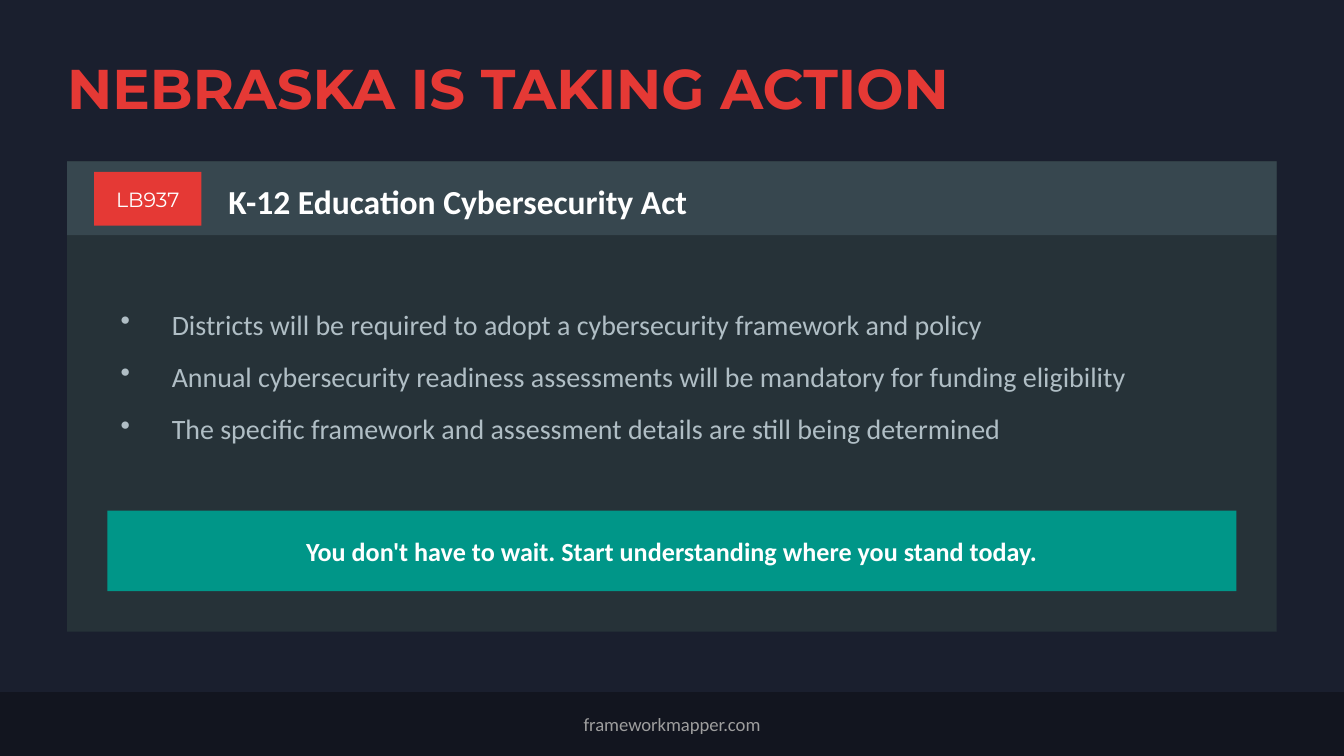
from lxml import etree
from pptx import Presentation
from pptx.dml.color import RGBColor
from pptx.enum import shapes, text
from pptx.oxml import ns
from pptx.util import Emu, Pt

PX = 4572
SLIDE_WIDTH, SLIDE_HEIGHT = 2000, 1125

NAVY = RGBColor(0x1A, 0x1F, 0x2E)
DARK_NAVY = RGBColor(0x12, 0x15, 0x1F)
CHARCOAL = RGBColor(0x26, 0x32, 0x38)
SLATE = RGBColor(0x37, 0x47, 0x4F)
RED = RGBColor(0xE5, 0x39, 0x35)
TEAL = RGBColor(0x00, 0x96, 0x88)
WHITE = RGBColor(0xFF, 0xFF, 0xFF)
MIST = RGBColor(0xB0, 0xBE, 0xC5)
GREY = RGBColor(0x9E, 0x9E, 0x9E)

HEADING_FONT, BODY_FONT = "Montserrat", "Calibri"
LEFT, CENTER = text.PP_ALIGN.LEFT, text.PP_ALIGN.CENTER

REQUIREMENTS = (
    "Districts will be required to adopt a cybersecurity framework and policy",
    "Annual cybersecurity readiness assessments will be mandatory for funding eligibility",
    "The specific framework and assessment details are still being determined",
)


def emu(*lengths):
    """Turn px lengths into EMU."""
    return [Emu(length * PX) for length in lengths]


def add_panel(slide, box, color):
    """Add a plain filled rectangle."""
    panel = slide.shapes.add_shape(shapes.MSO_SHAPE.RECTANGLE, *emu(*box))
    panel.shadow.inherit = False
    panel.fill.solid()
    panel.fill.fore_color.rgb = color
    panel.line.fill.background()
    return panel


def add_label(slide, box):
    """Add an empty text box."""
    return slide.shapes.add_textbox(*emu(*box))


def write(shape, lines, size, color, font=BODY_FONT, bold=False, align=LEFT, inset=0):
    """Fill a shape with vertically centred paragraphs and return them."""
    frame = shape.text_frame
    frame.word_wrap = True
    frame.auto_size = text.MSO_AUTO_SIZE.NONE
    frame.vertical_anchor = text.MSO_ANCHOR.MIDDLE
    frame.margin_left, frame.margin_right = emu(inset, inset)
    frame.margin_top, frame.margin_bottom = emu(inset // 2, inset // 2)
    frame.text = "\n".join(lines)
    for paragraph in frame.paragraphs:
        paragraph.alignment = align
        paragraph.font.name = font
        paragraph.font.size = Pt(size)
        paragraph.font.bold = bold
        paragraph.font.color.rgb = color
    return frame.paragraphs


def add_bullet(paragraph, indent):
    """Give a paragraph a hanging bullet and space after it."""
    paragraph.space_after = Pt(10)
    properties = paragraph._p.get_or_add_pPr()
    properties.set("marL", str(indent * PX))
    properties.set("indent", str(-indent * PX))
    bullet = etree.Element(ns.qn("a:buChar"), char="•")
    properties.find(ns.qn("a:spcAft")).addnext(bullet)


def place_title(slide, box):
    """Move and format the title placeholder."""
    title = slide.shapes.title
    title.left, title.top, title.width, title.height = emu(*box)
    write(title, ["NEBRASKA IS TAKING ACTION"], 30, RED, HEADING_FONT, bold=True)


def add_act_header(slide, box):
    """Add the header band with the bill number and the name of the act."""
    left, top, width, height = box
    add_panel(slide, box, SLATE)
    bill = add_panel(slide, (left + 40, top + 16, 160, 80), RED)
    write(bill, ["LB937"], 11, WHITE, HEADING_FONT, align=CENTER)
    act_name = add_label(slide, (left + 240, top + 10, width - 400, height - 10))
    write(act_name, ["K-12 Education Cybersecurity Act"], 18, WHITE, bold=True)


def add_act_card(slide, box):
    """Add the card with header, requirements and call to action."""
    left, top, width, height = box
    inner_left, inner_width = left + 60, width - 120
    add_panel(slide, box, CHARCOAL)
    add_act_header(slide, (left, top, width, 110))
    requirements = add_label(slide, (inner_left, top + 160, inner_width, 320))
    for requirement in write(requirements, REQUIREMENTS, 15, MIST, inset=20):
        add_bullet(requirement, 76)
    call = add_panel(slide, (inner_left, top + height - 180, inner_width, 120), TEAL)
    write(call, ["You don't have to wait. Start understanding where you stand today."],
          14, WHITE, bold=True, align=CENTER)


def add_footer(slide, box):
    """Add the footer band with the web address."""
    footer = add_panel(slide, box, DARK_NAVY)
    write(footer, ["frameworkmapper.com"], 10, GREY, align=CENTER, inset=20)


def main():
    """Build the slide and save it."""
    deck = Presentation()
    deck.slide_width, deck.slide_height = emu(SLIDE_WIDTH, SLIDE_HEIGHT)
    slide = deck.slides.add_slide(deck.slide_layouts[5])
    slide.background.fill.solid()
    slide.background.fill.fore_color.rgb = NAVY
    margin = 100
    content_width = SLIDE_WIDTH - 2 * margin
    footer_top = 1030
    place_title(slide, (margin, 60, content_width, 140))
    add_act_card(slide, (margin, 240, content_width, 700))
    add_footer(slide, (0, footer_top, SLIDE_WIDTH, SLIDE_HEIGHT - footer_top))
    deck.save("out.pptx")


if __name__ == "__main__":
    main()
